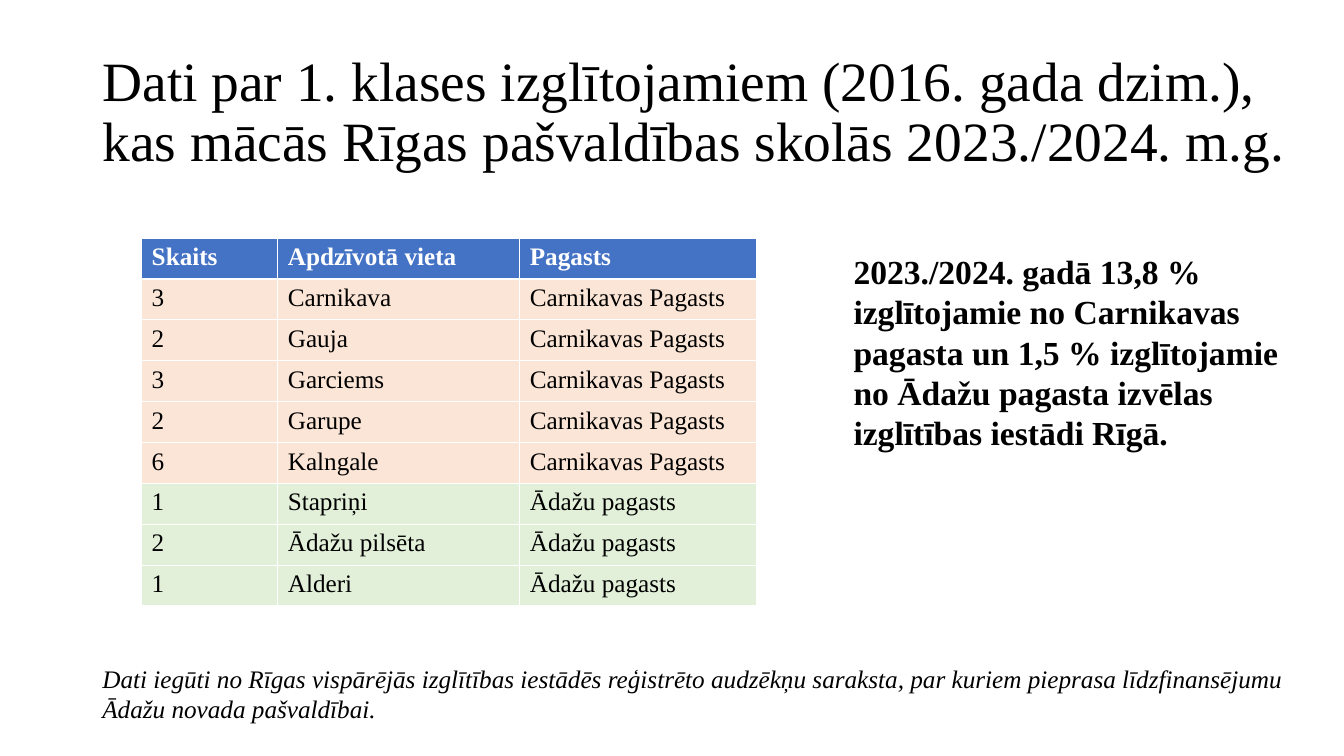
from pptx import Presentation
from pptx.dml.color import RGBColor
from pptx.enum.text import MSO_ANCHOR, MSO_AUTO_SIZE, PP_ALIGN
from pptx.util import Cm, Pt

FONT = "Times New Roman"
COLORS = {
    "black": "000000",
    "white": "FFFFFF",
    "head": "4472C4",
    "Carnikavas Pagasts": "FBE5D6",
    "Ādažu pagasts": "E2F0D9",
}
TITLE = ("Dati par 1. klases izglītojamiem (2016. gada dzim.), "
         "kas mācās Rīgas pašvaldības skolās 2023./2024. m.g.")
HEAD = ("Skaits", "Apdzīvotā vieta", "Pagasts")
PLACES = {
    "Carnikavas Pagasts": [
        (3, "Carnikava"), (2, "Gauja"), (3, "Garciems"),
        (2, "Garupe"), (6, "Kalngale"),
    ],
    "Ādažu pagasts": [(1, "Stapriņi"), (2, "Ādažu pilsēta"), (1, "Alderi")],
}
WIDTHS = (3.43, 6.1, 5.97)
ROW = 1.03
SOURCE = ("Dati iegūti no Rīgas vispārējās izglītības iestādēs reģistrēto "
          "audzēkņu saraksta, par kuriem pieprasa līdzfinansējumu "
          "Ādažu novada pašvaldībai.")
RESULT = ("2023./2024. gadā 13,8 % izglītojamie no Carnikavas pagasta un "
          "1,5 % izglītojamie no Ādažu pagasta izvēlas izglītības iestādi Rīgā.")
NOTES = [
    (SOURCE, (2.33, 16.59, 30.94, 1.8), 18, False, True),
    (RESULT, (21.26, 6.2, 11.46, 5.38), 24, True, False),
]


def color(name):
    return RGBColor.from_string(COLORS[name])


def write(frame, text, size, bold=False, italic=False, tone="black"):
    frame.text = text
    para = frame.paragraphs[0]
    para.alignment = PP_ALIGN.LEFT
    font = para.font
    font.name, font.size = FONT, Pt(size)
    font.bold, font.italic = bold, italic
    font.color.rgb = color(tone)
    return para


def add_title(slide):
    title = slide.shapes.title
    title.left, title.top = Cm(2.33), Cm(1.01)
    title.width, title.height = Cm(30.94), Cm(3.68)
    frame = title.text_frame
    frame.word_wrap = True
    frame.auto_size = MSO_AUTO_SIZE.NONE
    frame.vertical_anchor = MSO_ANCHOR.MIDDLE
    write(frame, TITLE, 39.6).line_spacing = 0.9


def add_places(slide):
    rows = [(HEAD, "head")]
    for parish, places in PLACES.items():
        rows += [((count, place, parish), parish) for count, place in places]
    table = slide.shapes.add_table(
        len(rows), len(HEAD), Cm(3.57), Cm(6.0),
        Cm(sum(WIDTHS)), Cm(ROW * len(rows))).table
    for column, width in zip(table.columns, WIDTHS):
        column.width = Cm(width)
    for r, (values, fill) in enumerate(rows):
        table.rows[r].height = Cm(ROW)
        head = fill == "head"
        for c, value in enumerate(values):
            cell = table.cell(r, c)
            cell.fill.solid()
            cell.fill.fore_color.rgb = color(fill)
            write(cell.text_frame, str(value), 18, bold=head,
                  tone="white" if head else "black")


def add_notes(slide):
    for text, place, size, bold, italic in NOTES:
        frame = slide.shapes.add_textbox(*map(Cm, place)).text_frame
        frame.word_wrap = True
        frame.auto_size = MSO_AUTO_SIZE.SHAPE_TO_FIT_TEXT
        write(frame, text, size, bold, italic)


def main():
    deck = Presentation()
    deck.slide_width, deck.slide_height = Cm(33.87), Cm(19.05)
    slide = deck.slides.add_slide(deck.slide_layouts[5])
    add_title(slide)
    add_places(slide)
    add_notes(slide)
    deck.save("out.pptx")


if __name__ == "__main__":
    main()
